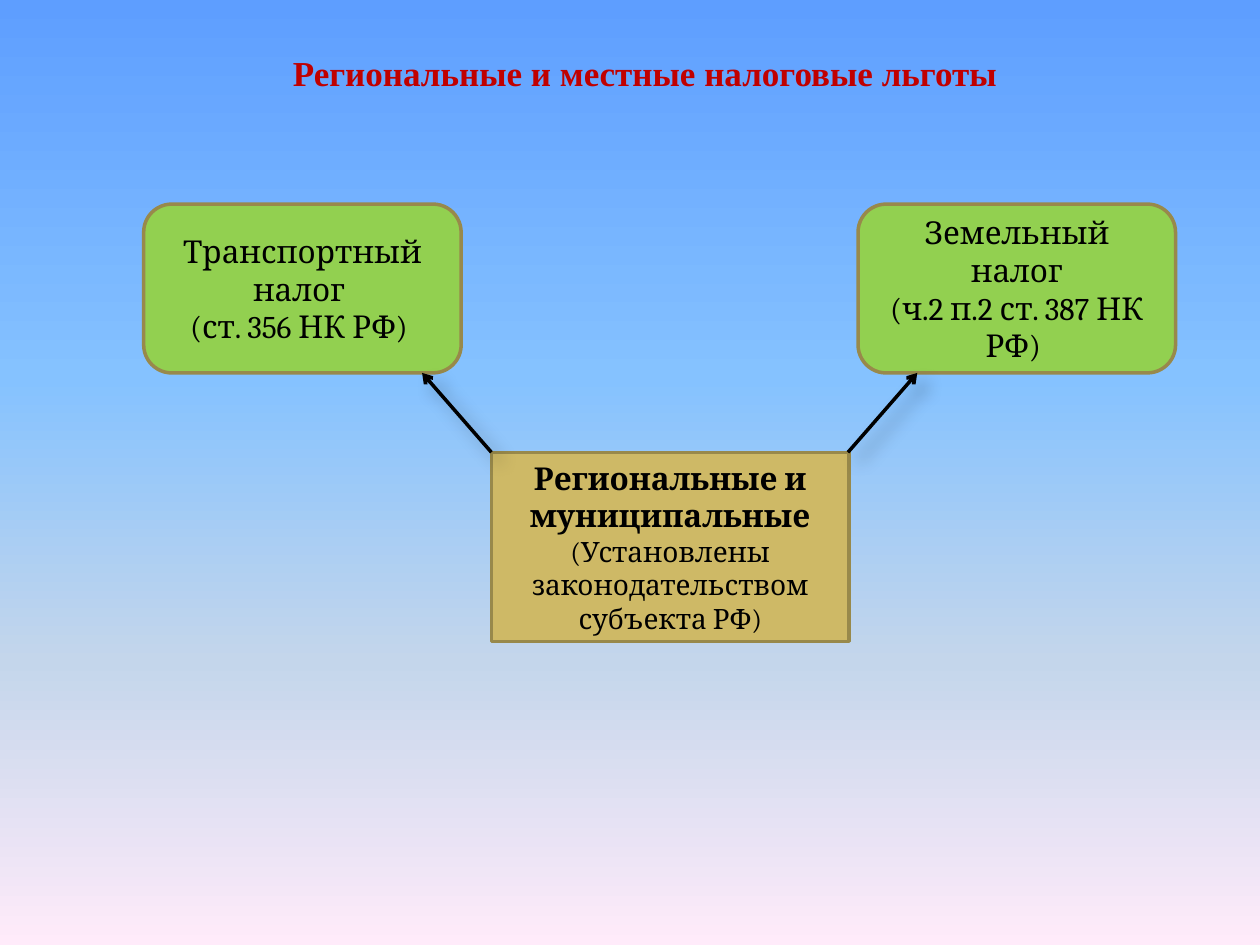
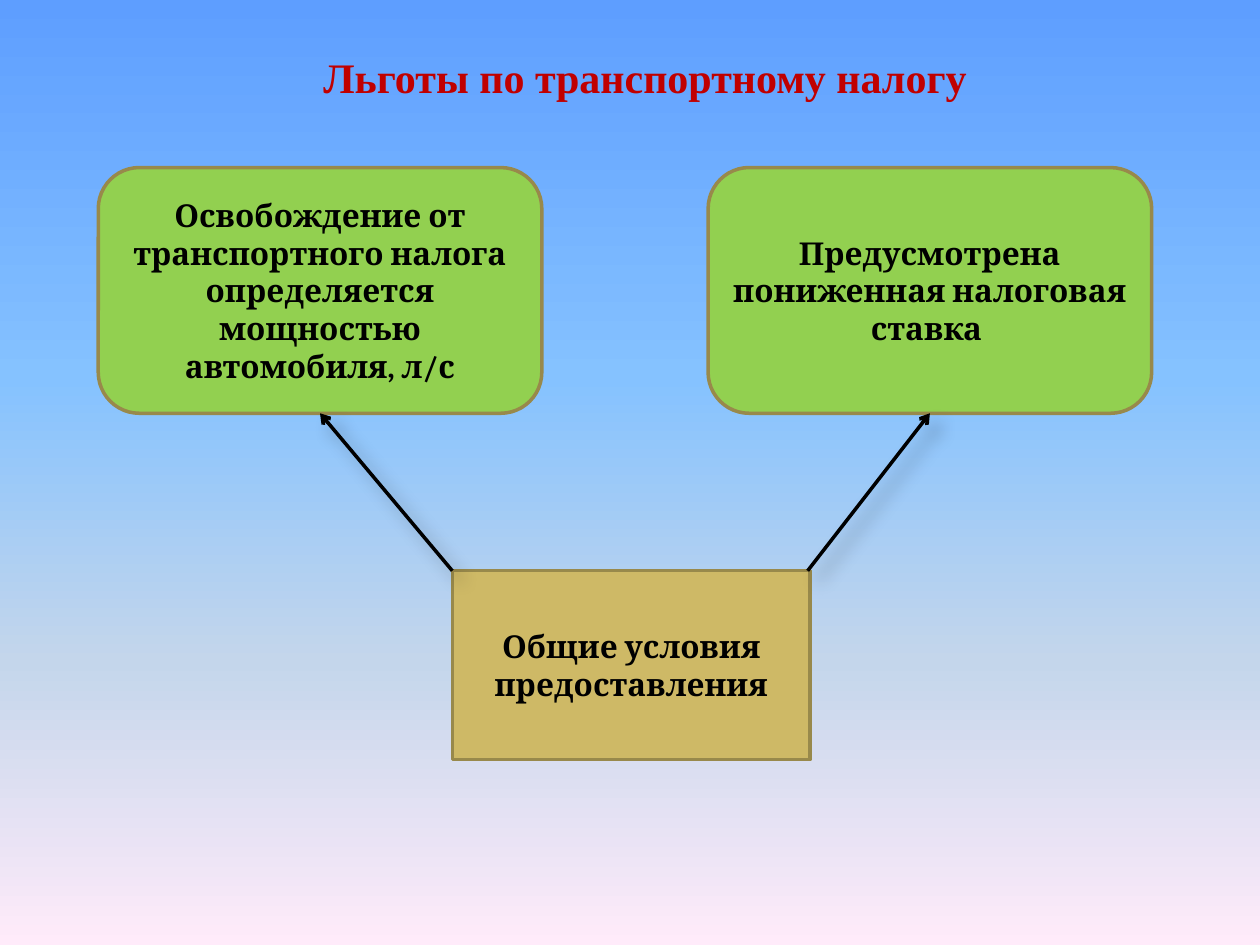
from lxml import etree
from pptx import Presentation
from pptx.dml.color import RGBColor as RGB
from pptx.enum.shapes import MSO_CONNECTOR as LINK, MSO_SHAPE as SHAPE
from pptx.enum.text import MSO_ANCHOR as ANCHOR, MSO_AUTO_SIZE as FIT, PP_ALIGN as ALIGN
from pptx.oxml import parse_xml
from pptx.oxml.ns import nsdecls, qn
from pptx.util import Pt

SCALE = 9144  # EMU in one px, 100 px to the inch
HUES = {
    "title": "C00000", "ink": "000000", "edge": "98894B",
    "tax": "92D050", "base": "CEB966",
}
SKY = [(0, "5E9EFF"), (40, "85C2FF"), (70, "C4D6EB"), (100, "FFEBFA")]
HEAD = {"name": "Times New Roman", "bold": True}
BODY = {"name": "Cambria", "size": Pt(18), "bold": False}
BOLD = {**BODY, "bold": True}
NOTE = {**BODY, "size": Pt(16)}
SHADE = f"""<a:effectLst {nsdecls("a")}>
  <a:outerShdw blurRad="{Pt(10.2)}" dist="{Pt(8)}" dir="2700000" algn="tl" rotWithShape="0">
    <a:srgbClr val="{HUES["ink"]}"><a:alpha val="35000"/></a:srgbClr>
  </a:outerShdw>
</a:effectLst>"""


def px(*sizes):
    return [size * SCALE for size in sizes]


def hue(name):
    return RGB.from_string(HUES[name])


def paint_sky(master):
    """Give every slide the same gradient from top to bottom."""
    fill = master.background.fill
    fill.gradient()
    fill.gradient_angle = 270
    stops = next(master.element.iter(qn("a:gsLst")))
    for stop in list(stops):
        stops.remove(stop)
    for spot, tone in SKY:
        stop = etree.SubElement(stops, qn("a:gs"), pos=str(spot * 1000))
        etree.SubElement(stop, qn("a:srgbClr"), val=tone)


def write(frame, lines, color):
    """Fill a frame with centred paragraphs of (text, format)."""
    frame.word_wrap = True
    for i, (text, style) in enumerate(lines):
        para = frame.add_paragraph() if i else frame.paragraphs[0]
        para.alignment = ALIGN.CENTER
        run = para.add_run()
        run.text = text
        for key, value in style.items():
            setattr(run.font, key, value)
        run.font.color.rgb = hue(color)


def add_page(prs, text, size, high):
    """Add a slide with its title."""
    page = prs.slides.add_slide(prs.slide_layouts[5])
    title = page.shapes.title
    title.left, title.top, title.width, title.height = px(122, 36, 780, high)
    frame = title.text_frame
    frame.auto_size = FIT.NONE
    frame.vertical_anchor = ANCHOR.TOP
    write(frame, [(text, {**HEAD, "size": Pt(size)})], "title")
    return page


def add_box(page, kind, fill, place, lines):
    box = page.shapes.add_shape(kind, *px(*place))
    box.shadow.inherit = False
    box.fill.solid()
    box.fill.fore_color.rgb = hue(fill)
    box.line.color.rgb = hue("edge")
    box.line.width = Pt(2)
    box.text_frame.vertical_anchor = ANCHOR.MIDDLE
    write(box.text_frame, lines, "ink")


def add_base(page, left, top, lines):
    add_box(page, SHAPE.RECTANGLE, "base", (left, top, 284, 150), lines)


def add_pair(page, lefts, top, size, texts):
    """Add the rounded boxes of one row."""
    for left, lines in zip(lefts, texts):
        add_box(page, SHAPE.ROUNDED_RECTANGLE, "tax", (left, top, *size), lines)


def add_arrow(page, start, end):
    arrow = page.shapes.add_connector(LINK.STRAIGHT, *px(*start, *end))
    arrow.line.color.rgb = hue("ink")
    arrow.line.width = Pt(2)
    props = arrow.element.spPr
    etree.SubElement(props.find(qn("a:ln")), qn("a:tailEnd"), type="arrow")
    props.append(parse_xml(SHADE))


def main():
    prs = Presentation()
    prs.slide_width, prs.slide_height = px(1000, 750)
    paint_sky(prs.slide_master)

    # Regional and local tax reliefs
    page = add_page(prs, "Региональные и местные налоговые льготы", 20, 44)
    add_base(page, 390, 359, [
        ("Региональные и муниципальные", BOLD),
        ("(Установлены законодательством субъекта РФ)", NOTE),
    ])
    add_pair(page, (114, 681), 162, (252, 134), [
        [("Транспортный налог ", BODY), ("(ст. 356 НК РФ) ", BODY)],
        [("Земельный налог", BODY), ("(ч.2 п.2 ст. 387 НК РФ) ", BODY)],
    ])
    for start, end in ((390, 335), (673, 728)):
        add_arrow(page, (start, 359), (end, 296))

    # Transport tax reliefs
    page = add_page(prs, "Льготы по транспортному налогу", 24, 84)
    add_base(page, 359, 453, [("Общие условия предоставления", BOLD)])
    add_pair(page, (78, 562), 133, (352, 195), [
        [("Освобождение от транспортного налога определяется "
          "мощностью автомобиля, л/с", BOLD)],
        [("Предусмотрена пониженная налоговая ставка ", BOLD)],
    ])
    for start, end in ((359, 254), (641, 738)):
        add_arrow(page, (start, 453), (end, 328))

    prs.save("out.pptx")


if __name__ == "__main__":
    main()
